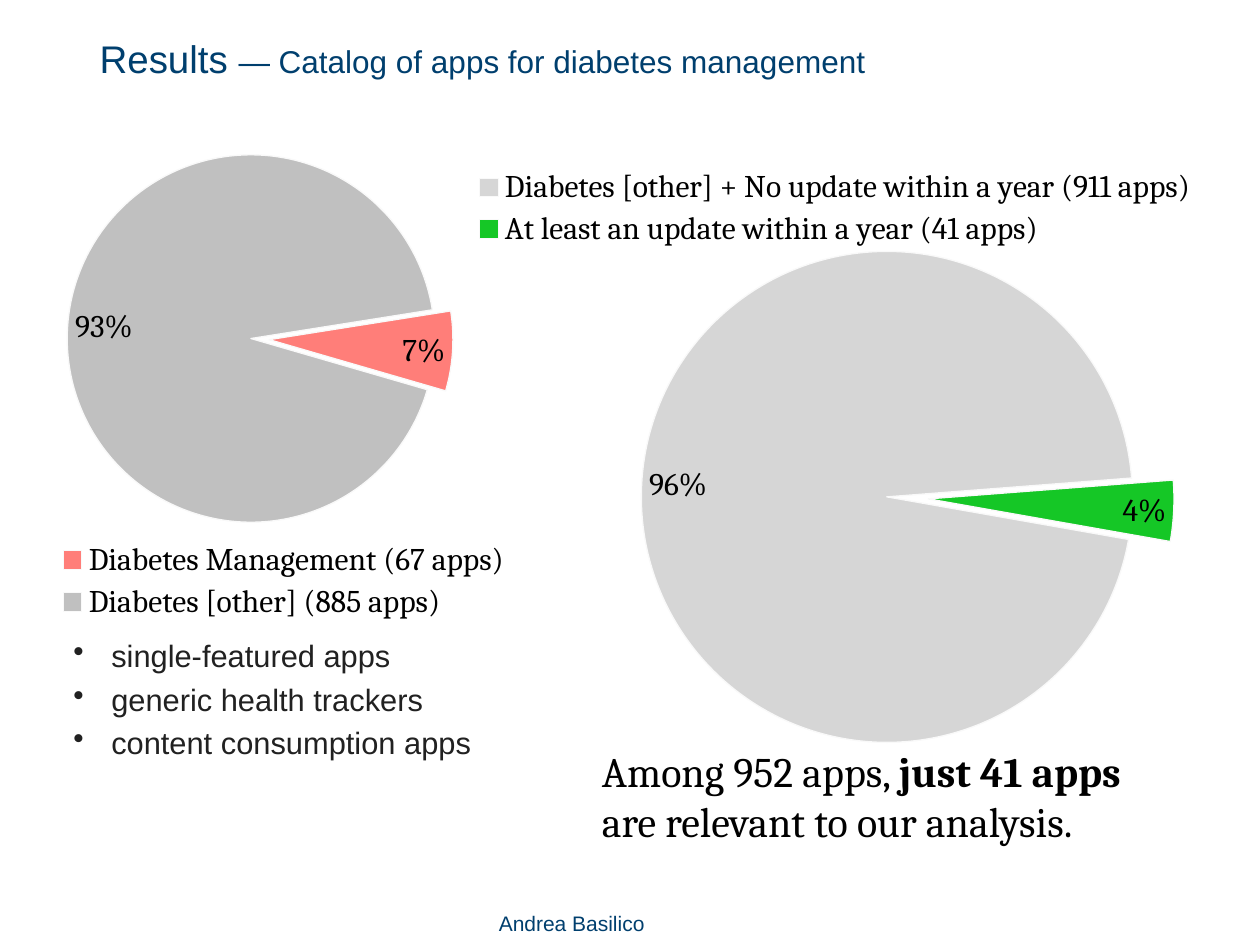
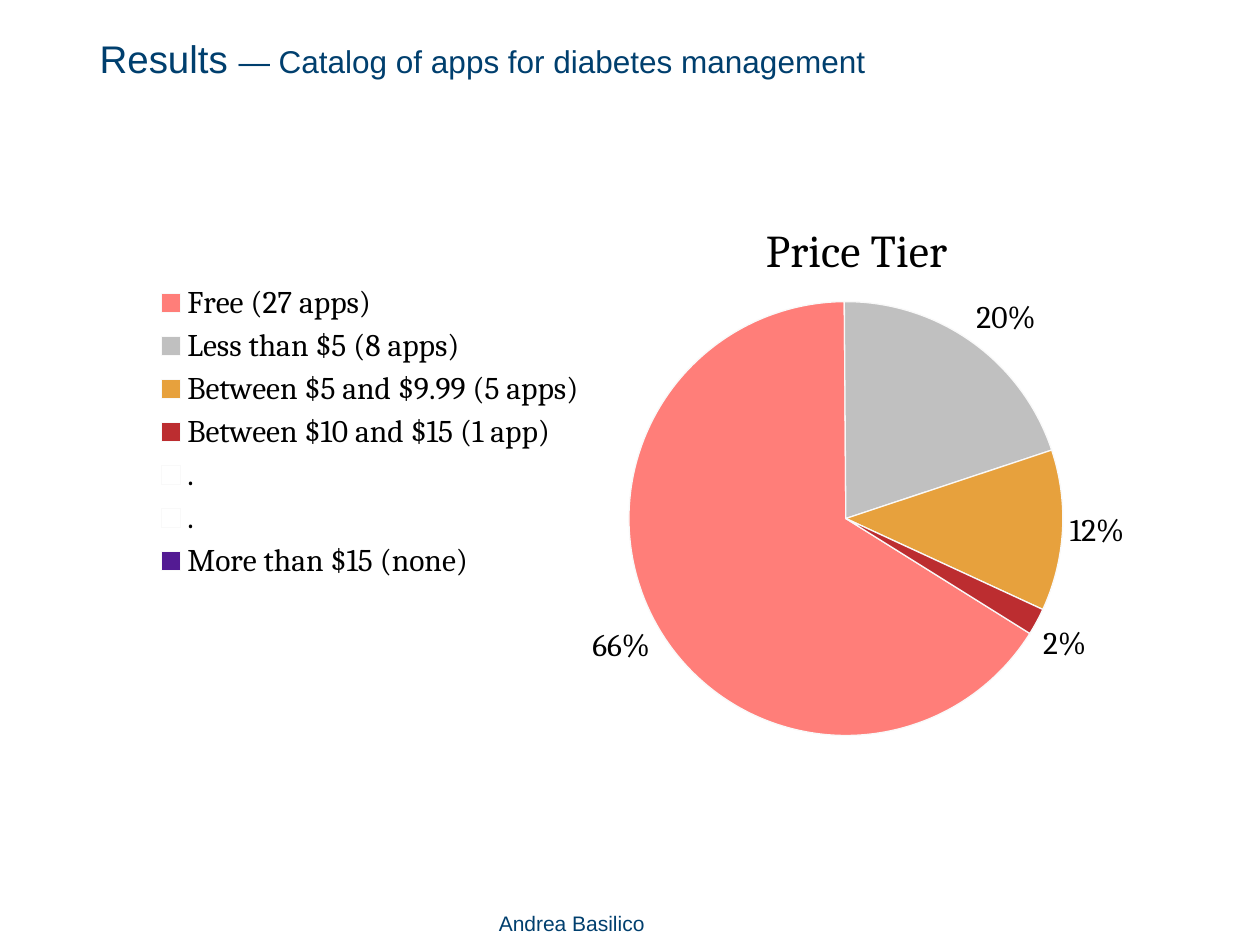
from lxml.etree import SubElement
from pptx import Presentation
from pptx.chart.data import CategoryChartData
from pptx.dml.color import RGBColor
from pptx.enum.chart import XL_CHART_TYPE, XL_LABEL_POSITION, XL_LEGEND_POSITION
from pptx.enum.text import PP_ALIGN
from pptx.oxml import parse_xml
from pptx.oxml.ns import nsdecls, qn
from pptx.util import Pt

NAVY, BLACK, CHARCOAL = "003F6E", "000000", "212121"
SALMON, SILVER, PALE_GRAY, GREEN = "FF7E79", "C0C0C0", "D6D6D6", "15C726"
AMBER, RED, WHITE, PURPLE = "E7A13D", "BC2D30", "FFFFFF", "531B93"
SLICE_EDGE = "F9F9F9"
SANS, SERIF = "Arial", "Cambria"


def color(value):
    """Turn a hex string into a colour."""
    return RGBColor.from_string(value)


def style(font, size, name, ink):
    """Set size, typeface and colour of a font."""
    font.size, font.name = Pt(size), name
    font.color.rgb = color(ink)


def add_text(page, place, lines, size, name, ink, inset=0, wrap=True):
    """Add a text box; each line is a list of (text, run font settings)."""
    box = page.shapes.add_textbox(*map(Pt, place))
    frame = box.text_frame
    frame.word_wrap = wrap
    frame.margin_left = frame.margin_right = Pt(inset)
    frame.margin_top = frame.margin_bottom = Pt(inset)
    for index, line in enumerate(lines):
        para = frame.paragraphs[0] if index == 0 else frame.add_paragraph()
        for text, settings in line:
            span = para.add_run()
            span.text = text
            for key, value in settings.items():
                setattr(span.font, key, value)
        style(para.font, size, name, ink)
    return frame.paragraphs


def add_bullets(page, place, items):
    """Add a bulleted list."""
    paras = add_text(page, place, [[] for item in items], 17.6, SANS, CHARCOAL)
    for index, (para, item) in enumerate(zip(paras, items)):
        properties = para._p.get_or_add_pPr()
        properties.set("marL", str(Pt(21.6)))
        properties.set("indent", str(-Pt(21.6)))
        bullet = parse_xml(f'<a:buChar {nsdecls("a")} char="•"/>')
        properties.insert(0, bullet)
        if index:
            para.space_before = Pt(3.6)
        para.add_run().text = item


def add_frame(deck):
    """Add a page with the shared title and footer."""
    page = deck.slides.add_slide(deck.slide_layouts[6])
    title = [("Results ", {}),
             ("— Catalog of apps for diabetes management", {"size": Pt(18)})]
    add_text(page, (57, 20, 587, 66), [title], 22, SANS, NAVY)
    footer = add_text(page, (18, 517, 354, 21), [[("Andrea Basilico", {})]],
                      12, SANS, NAVY, inset=3.6)
    footer[0].alignment = PP_ALIGN.RIGHT
    return page


def place_part(chart, part, index, frame, place):
    """Put a chart part at a place given in page points."""
    element = chart._chartSpace.xpath(f".//c:{part}")[0]
    for old in element.findall(qn("c:layout")):
        element.remove(old)
    layout = parse_xml(f'<c:layout {nsdecls("c")}/>')
    element.insert(index, layout)
    manual = SubElement(layout, qn("c:manualLayout"))
    left, top, width, height = frame
    fractions = [(place[0] - left) / width, (place[1] - top) / height]
    fractions += [side / whole for side, whole in zip(place[2:], (width, height))]
    settings = [("layoutTarget", "inner")] if part == "plotArea" else []
    settings += [("xMode", "edge"), ("yMode", "edge")]
    settings += [(key, f"{part_of:.4f}") for key, part_of in zip("xywh", fractions)]
    for key, value in settings:
        SubElement(manual, qn(f"c:{key}")).set("val", value)


def add_labels(series, values, position):
    """Label the slices with percentages, leaving out empty ones."""
    labels = series.data_labels
    labels.show_percentage, labels.show_value = True, False
    labels.number_format, labels.number_format_is_linked = "0%", False
    labels.position = position
    style(labels.font, 18, SERIF, BLACK)
    empty = [index for index, value in enumerate(values) if value == 0]
    for order, index in enumerate(empty):
        labels._element.insert(order, parse_xml(
            f'<c:dLbl {nsdecls("c")}><c:idx val="{index}"/>'
            '<c:delete val="1"/></c:dLbl>'))


def add_pie(page, name, slices, frame, pie, legend, start, position):
    """Add a pie from (category, value, colour) slices and return its chart."""
    categories, values, fills = zip(*slices)
    data = CategoryChartData()
    data.categories = categories
    data.add_series(name, values)
    chart = page.shapes.add_chart(XL_CHART_TYPE.PIE, *map(Pt, frame), data).chart
    style(chart.font, 10, SANS, BLACK)
    chart.has_title = False
    chart.has_legend = True
    chart.legend.position = XL_LEGEND_POSITION.RIGHT
    chart.legend.include_in_layout = False
    style(chart.legend.font, 18, SERIF, BLACK)
    plot = chart.plots[0]
    plot.vary_by_categories = True
    series = plot.series[0]
    for index, fill in enumerate(fills):
        form = series.points[index].format
        form.fill.solid()
        form.fill.fore_color.rgb = color(fill)
        form.line.color.rgb = color(SLICE_EDGE)
        form.line.width = Pt(0.75)
    add_labels(series, values, position)
    SubElement(plot._element, qn("c:firstSliceAng")).set("val", str(start))
    left, top, size = pie
    place_part(chart, "plotArea", 0, frame, (left, top, size, size))
    place_part(chart, "legend", 1, frame, legend)
    return chart


def explode(chart, index, percent):
    """Pull one slice out of the pie."""
    point = chart._chartSpace.xpath(f".//c:dPt[c:idx/@val='{index}']")[0]
    offset = parse_xml(f'<c:explosion {nsdecls("c")} val="{percent}"/>')
    point.find(qn("c:spPr")).addprevious(offset)


def add_chart_title(chart, text, frame, corner):
    """Give a chart a title at a page position."""
    chart.has_title = True
    para = chart.chart_title.text_frame.paragraphs[0]
    para.add_run().text = text
    style(para.font, 26, SERIF, BLACK)
    para.font.bold = False
    chart.chart_title.include_in_layout = False
    place_part(chart, "title", 1, frame, corner)


def build_catalog(deck):
    """Show how many apps are relevant."""
    page = add_frame(deck)
    inside = XL_LABEL_POSITION.INSIDE_END
    management = add_pie(
        page, "Number of apps",
        [("Diabetes Management (67 apps)", 7, SALMON),
         ("Diabetes [other] (885 apps)", 93, SILVER)],
        (4, 87, 316, 270), (38.4, 88.5, 210), (33, 307, 258, 50), 81, inside)
    explode(management, 0, 10)
    add_bullets(page, (42, 364, 238, 84),
                ["single-featured apps", "generic health trackers",
                 "content consumption apps"])
    updates = add_pie(
        page, "Number of apps",
        [("Diabetes [other] + No update within a year (911 apps)", 96, PALE_GRAY),
         ("At least an update within a year (41 apps)", 4, GREEN)],
        (260, 90, 455, 340), (366.5, 143.7, 280.6), (271, 94, 412, 50), 100, inside)
    explode(updates, 1, 17)
    add_text(page, (344, 426, 343, 58),
             [[("Among 952 apps, ", {}), ("just 41 apps", {"bold": True})],
              [("are relevant to our analysis.", {})]],
             24, SERIF, BLACK, wrap=False)


def build_prices(deck):
    """Show the price tiers of the relevant apps."""
    page = add_frame(deck)
    frame = (80, 112, 600, 358)
    prices = add_pie(
        page, "Price Tier",
        [("Free (27 apps)", 66, SALMON),
         ("Less than $5 (8 apps)", 20, SILVER),
         ("Between $5 and $9.99 (5 apps)", 12, AMBER),
         ("Between $10 and $15 (1 app)", 2, RED),
         (".", 0, WHITE),
         (".", 0, WHITE),
         ("More than $15 (none)", 0, PURPLE)],
        frame, (359.4, 172.4, 248), (89, 159, 245, 176), 122,
        XL_LABEL_POSITION.OUTSIDE_END)
    add_chart_title(prices, "Price Tier", frame, (433, 121))


def main():
    """Build and save the deck."""
    deck = Presentation()
    deck.slide_width, deck.slide_height = Pt(720), Pt(540)
    build_catalog(deck)
    build_prices(deck)
    deck.save("out.pptx")


if __name__ == "__main__":
    main()
